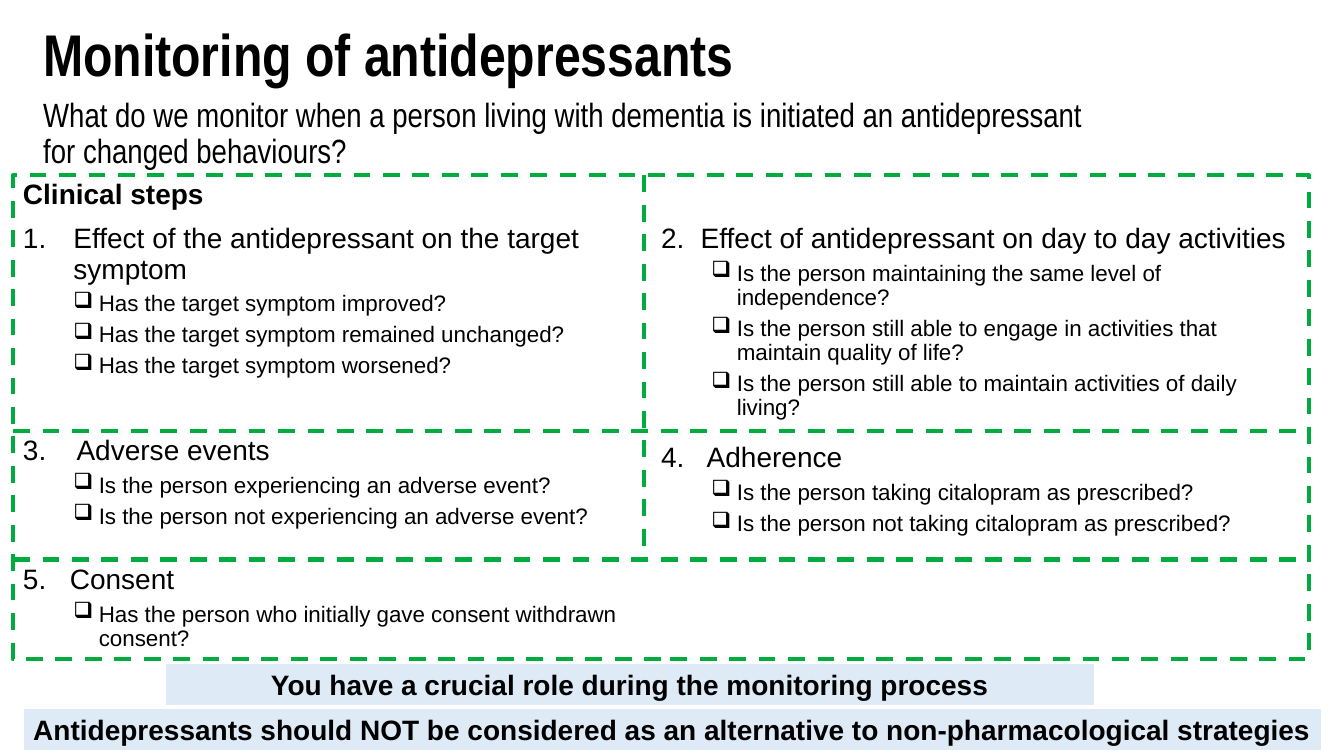
from lxml import etree
from pptx import Presentation
from pptx.dml.color import RGBColor
from pptx.enum import dml, shapes, text
from pptx.oxml import ns
from pptx.util import Cm, Pt

BLACK = RGBColor(0x00, 0x00, 0x00)
WHITE = RGBColor(0xFF, 0xFF, 0xFF)
GREEN = RGBColor(0x00, 0xAC, 0x3E)
PALE_BLUE = RGBColor(0xDE, 0xEB, 0xF7)


def write(frame, words, size=20, bold=False, font="Arial", align=text.PP_ALIGN.LEFT,
          spacing=0.9, before=10, left=0, hanging=0, number=None, bullet=None):
    """Add a paragraph to a frame, using the empty first one if it is free."""
    first = not frame.text
    para = frame.paragraphs[0] if first else frame.add_paragraph()
    para.alignment = align
    para.line_spacing = spacing
    para.space_before = Pt(0 if first else before)
    properties = para._p.get_or_add_pPr()
    properties.set("marL", str(Cm(left)))
    properties.set("indent", str(-Cm(hanging)))
    if number:
        etree.SubElement(properties, ns.qn("a:buAutoNum"),
                         type="arabicPeriod", startAt=str(number))
    if bullet:
        etree.SubElement(properties, ns.qn("a:buChar"), char=bullet)
    span = para.add_run()
    span.text = words
    span.font.name, span.font.size, span.font.bold = font, Pt(size), bold
    span.font.color.rgb = BLACK


def dash(line):
    line.color.rgb = GREEN
    line.width = Pt(3)
    line.dash_style = dml.MSO_LINE.DASH


deck = Presentation()
deck.slide_width, deck.slide_height = Cm(33.87), Cm(19.05)
page = deck.slides.add_slide(deck.slide_layouts[6])

# Title and subtitle
headings = [
    ("Monitoring of antidepressants", 0.53, 2.06, 42, True),
    ("What do we monitor when a person living with dementia is initiated "
     "an antidepressant for changed behaviours?", 2.36, 1.8, 24, False),
]
for words, top, height, size, bold in headings:
    box = page.shapes.add_textbox(Cm(0.84), Cm(top), Cm(27.38), Cm(height))
    box.text_frame.word_wrap = True
    write(box.text_frame, words, size=size, bold=bold, font="Arial Narrow")

# Dashed frame and its dividers
LEFT, TOP, RIGHT, BOTTOM = 0.33, 4.42, 32.99, 16.61
MIDDLE, ROW_2, ROW_3 = 16.23, 10.87, 14.1
border = page.shapes.add_shape(shapes.MSO_SHAPE.RECTANGLE, Cm(LEFT), Cm(TOP),
                               Cm(RIGHT - LEFT), Cm(BOTTOM - TOP))
border.shadow.inherit = False
border.fill.background()
dash(border.line)

dividers = [
    (LEFT, ROW_2, RIGHT, ROW_2),
    (MIDDLE, TOP, MIDDLE, ROW_3),
    (LEFT, ROW_3, RIGHT, ROW_3),
]
for ends in dividers:
    divider = page.shapes.add_connector(shapes.MSO_CONNECTOR.STRAIGHT,
                                        *[Cm(end) for end in ends])
    etree.SubElement(divider._element.spPr, ns.qn("a:effectLst"))
    dash(divider.line)

# Clinical steps: column, top, height, heading indent, heading, questions
COLUMN_1, COLUMN_2, COLUMN_WIDTH = 0.58, 16.66, 16.08
steps = [
    (COLUMN_1, 4.55, 5.2, 1.27, "Effect of the antidepressant on the target symptom",
     ["Has the target symptom improved?",
      "Has the target symptom remained unchanged?",
      "Has the target symptom worsened?"]),
    (COLUMN_2, 5.66, 5.1, 1, "Effect of antidepressant on day to day activities",
     ["Is the person maintaining the same level of independence?",
      "Is the person still able to engage in activities that maintain quality of life?",
      "Is the person still able to maintain activities of daily living?"]),
    (COLUMN_1, 11, 2.5, 1.35, "Adverse events",
     ["Is the person experiencing an adverse event?",
      "Is the person not experiencing an adverse event?"]),
    (COLUMN_2, 11.18, 2.5, 1.15, "Adherence",
     ["Is the person taking citalopram as prescribed?",
      "Is the person not taking citalopram as prescribed?"]),
    (COLUMN_1, 14.25, 2.3, 1.18, "Consent",
     ["Has the person who initially gave consent withdrawn consent?"]),
]
for number, (left, top, height, indent, heading, questions) in enumerate(steps, 1):
    box = page.shapes.add_textbox(Cm(left), Cm(top), Cm(COLUMN_WIDTH), Cm(height))
    frame = box.text_frame
    frame.word_wrap = True
    frame.margin_left = frame.margin_right = frame.margin_top = frame.margin_bottom = 0
    if number == 1:
        write(frame, "Clinical steps", bold=True)
    write(frame, heading, left=indent, hanging=indent, number=number)
    for question in questions:
        write(frame, question, size=16, before=5, left=1.91, hanging=0.64, bullet="❑")

# Key messages
messages = [
    ("You have a crucial role during the monitoring process", 4.14, 16.69, 23.47),
    ("Antidepressants should NOT be considered as an alternative to "
     "non-pharmacological strategies", 0.56, 17.83, 32.77),
]
for words, left, top, width in messages:
    banner = page.shapes.add_shape(shapes.MSO_SHAPE.RECTANGLE, Cm(left), Cm(top),
                                   Cm(width), Cm(1.12))
    banner.shadow.inherit = False
    banner.fill.solid()
    banner.fill.fore_color.rgb = PALE_BLUE
    banner.line.color.rgb = WHITE
    banner.line.width = Pt(2.25)
    banner.text_frame.word_wrap = False
    write(banner.text_frame, words, bold=True, align=text.PP_ALIGN.CENTER, spacing=1.0)

deck.save("out.pptx")
